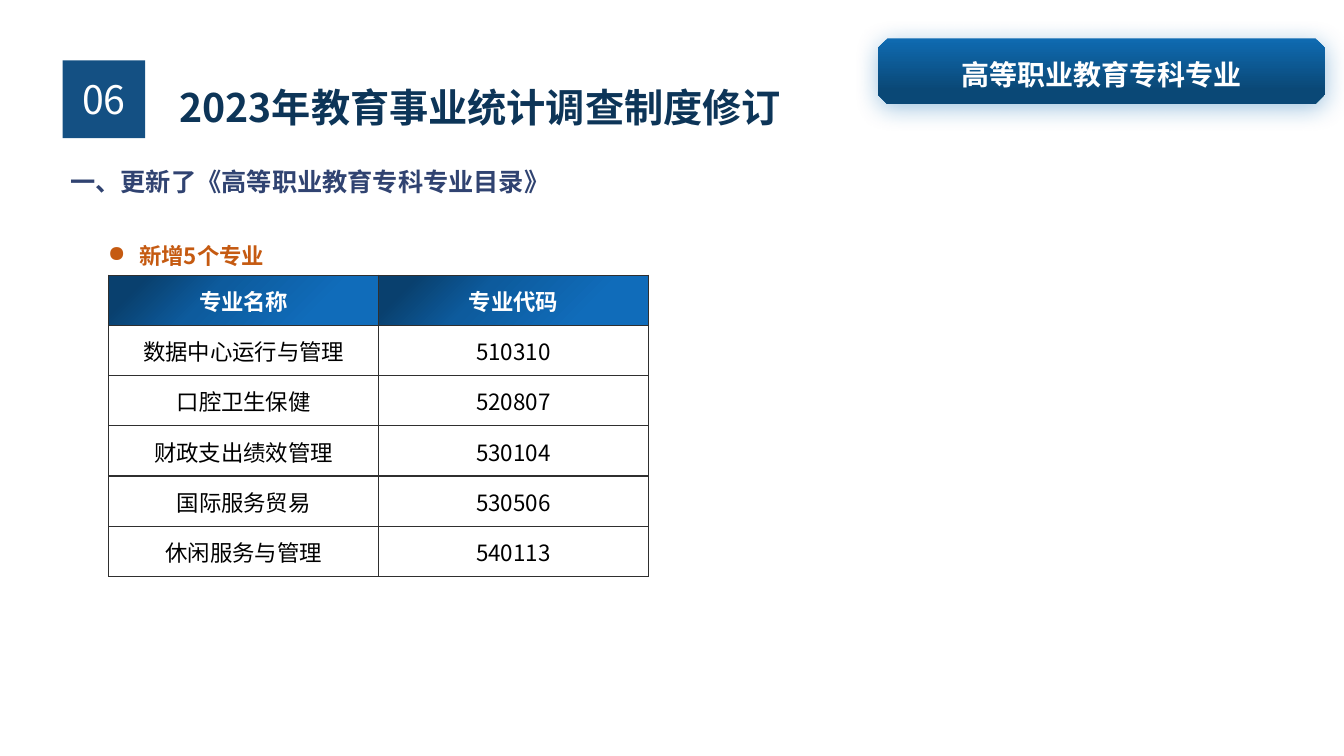
from dataclasses import dataclass

from lxml import etree
from pptx import Presentation
from pptx.dml.color import RGBColor
from pptx.enum.shapes import MSO_SHAPE
from pptx.enum.text import MSO_ANCHOR, MSO_AUTO_SIZE, PP_ALIGN
from pptx.oxml.ns import qn
from pptx.util import Inches, Pt

RECTANGLE, OCTAGON = MSO_SHAPE.RECTANGLE, MSO_SHAPE.OCTAGON
LEFT, CENTER = PP_ALIGN.LEFT, PP_ALIGN.CENTER
TOP, MIDDLE = MSO_ANCHOR.TOP, MSO_ANCHOR.MIDDLE
NO_AUTOFIT = MSO_AUTO_SIZE.NONE


@dataclass(frozen=True)
class Theme:
    font: str = "Noto Sans CJK SC"
    title: str = "0D3558"
    number: str = "145083"
    heading: str = "304371"
    accent: str = "C55A11"
    glow: str = "0F6BB2"
    border: str = "2F2F2F"
    white: str = "FFFFFF"
    black: str = "000000"
    title_size: int = 28
    badge_size: int = 20
    heading_size: int = 18
    body_size: int = 16


@dataclass(frozen=True)
class Box:
    left: float
    top: float
    width: float
    height: float

    def lengths(self):
        return [Inches(v) for v in (self.left, self.top, self.width, self.height)]


@dataclass(frozen=True)
class Gradient:
    stops: tuple
    angle: int


@dataclass(frozen=True)
class Major:
    name: str
    code: str


THEME = Theme()
BADGE_GRADIENT = Gradient(((0, "0F6BB2"), (79, "0A4876")), 90)
HEADER_GRADIENT = Gradient(((12, "09406E"), (38, "0D5B9D"), (77, "106CBA")), 45)
HEADER = Major("专业名称", "专业代码")
MAJORS = [
    Major("数据中心运行与管理", "510310"),
    Major("口腔卫生保健", "520807"),
    Major("财政支出绩效管理", "530104"),
    Major("国际服务贸易", "530506"),
    Major("休闲服务与管理", "540113"),
]


def add_xml(parent, tag: str, **attributes):
    return etree.SubElement(parent, qn(tag), {k: str(v) for k, v in attributes.items()})


def write_text(tf, text: str, *, size: int, color: str, bold=False, align=LEFT,
               anchor=TOP, spacing=None, after=None, margin=None):
    tf.word_wrap = True
    tf.auto_size = NO_AUTOFIT
    tf.vertical_anchor = anchor
    if margin is not None:
        tf.margin_left = tf.margin_top = tf.margin_right = tf.margin_bottom = Inches(margin)
    p = tf.paragraphs[0]
    return write_paragraph(p, text, size=size, color=color, bold=bold,
                           align=align, spacing=spacing, after=after)


def write_paragraph(p, text: str, *, size: int, color: str, bold=False,
                    align=LEFT, spacing=None, after=None):
    p.alignment = align
    if spacing is not None:
        p.line_spacing = spacing
    if after is not None:
        p.space_after = Pt(after)
    r = p.add_run()
    r.text = text
    r.font.size = Pt(size)
    r.font.bold = bold
    r.font.color.rgb = RGBColor.from_string(color)
    r.font.name = THEME.font
    add_xml(r.font._element, "a:ea", typeface=THEME.font)
    return p


def set_gradient(fill, properties, gradient: Gradient) -> None:
    fill.solid()
    solid = properties.find(qn("a:solidFill"))
    grad = etree.Element(qn("a:gradFill"), rotWithShape="1")
    stops = add_xml(grad, "a:gsLst")
    for position, color in gradient.stops:
        stop = add_xml(stops, "a:gs", pos=position * 1000)
        add_xml(stop, "a:srgbClr", val=color)
    add_xml(grad, "a:lin", ang=gradient.angle * 60000, scaled=0)
    properties.replace(solid, grad)


def add_panel(s, kind, box: Box):
    sp = s.shapes.add_shape(kind, *box.lengths())
    sp.shadow.inherit = False
    sp.line.fill.background()
    return sp


def add_number(s) -> None:
    sp = add_panel(s, RECTANGLE, Box(0.62, 0.6, 0.82, 0.77))
    sp.fill.solid()
    sp.fill.fore_color.rgb = RGBColor.from_string(THEME.number)
    write_text(sp.text_frame, "06", size=THEME.title_size, color=THEME.white,
               align=CENTER, anchor=MIDDLE)


def add_badge(s) -> None:
    sp = add_panel(s, OCTAGON, Box(8.71, 0.38, 4.43, 0.65))
    sp.adjustments[0] = 0.143
    properties = sp._element.spPr
    set_gradient(sp.fill, properties, BADGE_GRADIENT)
    shadow = add_xml(properties.find(qn("a:effectLst")), "a:outerShdw", blurRad=Pt(17),
                     dist=Pt(3), dir=90 * 60000, algn="t", rotWithShape=0)
    add_xml(add_xml(shadow, "a:srgbClr", val=THEME.glow), "a:alpha", val=40000)
    write_text(sp.text_frame, "高等职业教育专科专业", size=THEME.badge_size,
               color=THEME.white, bold=True, align=CENTER, anchor=MIDDLE, spacing=1.2)


def add_title(s) -> None:
    sp = s.shapes.title
    sp.left, sp.top, sp.width, sp.height = Box(1.78, 0.73, 6.31, 0.52).lengths()
    write_text(sp.text_frame, "2023年教育事业统计调查制度修订", size=THEME.title_size,
               color=THEME.title, bold=True, spacing=1.2, margin=0)


def add_headings(s) -> None:
    sp = s.shapes.add_textbox(*Box(0.6, 1.6, 5, 0.4).lengths())
    write_text(sp.text_frame, "一、更新了《高等职业教育专科专业目录》",
               size=THEME.heading_size, color=THEME.heading, bold=True)
    sp = s.shapes.add_textbox(*Box(1.07, 2.22, 11.19, 0.4).lengths())
    p = write_text(sp.text_frame, "新增5个专业", size=THEME.body_size, color=THEME.accent,
                   bold=True, spacing=Pt(32), after=12, margin=0)
    properties = p._p.get_or_add_pPr()
    properties.set("marL", str(Inches(0.31)))
    properties.set("indent", str(Inches(-0.31)))
    add_xml(add_xml(properties, "a:buClr"), "a:srgbClr", val=THEME.accent)
    add_xml(properties, "a:buChar", char="●")


def format_cell(cell, text: str, is_header: bool) -> None:
    cell.margin_left = cell.margin_top = cell.margin_right = Inches(0.01)
    cell.margin_bottom = 0
    cell.vertical_anchor = MIDDLE
    properties = cell._tc.get_or_add_tcPr()
    for side in ("L", "R", "T", "B"):
        line = add_xml(properties, f"a:ln{side}", w=Pt(1))
        add_xml(add_xml(line, "a:solidFill"), "a:srgbClr", val=THEME.border)
    if is_header:
        set_gradient(cell.fill, properties, HEADER_GRADIENT)
    else:
        cell.fill.background()
    write_paragraph(cell.text_frame.paragraphs[0], text, size=THEME.body_size, bold=is_header,
                    color=THEME.white if is_header else THEME.black, align=CENTER)


def add_majors(s) -> None:
    rows = [HEADER, *MAJORS]
    box = Box(1.08, 2.73, 5.35, 2.99)
    table = s.shapes.add_table(len(rows), 2, *box.lengths()).table
    for i, major in enumerate(rows):
        for j, text in enumerate((major.name, major.code)):
            format_cell(table.cell(i, j), text, i == 0)


def main() -> None:
    prs = Presentation()
    prs.slide_width, prs.slide_height = Inches(13.33), Inches(7.5)
    s = prs.slides.add_slide(prs.slide_layouts[5])
    add_title(s)
    add_number(s)
    add_badge(s)
    add_headings(s)
    add_majors(s)
    prs.save("out.pptx")


if __name__ == "__main__":
    main()
